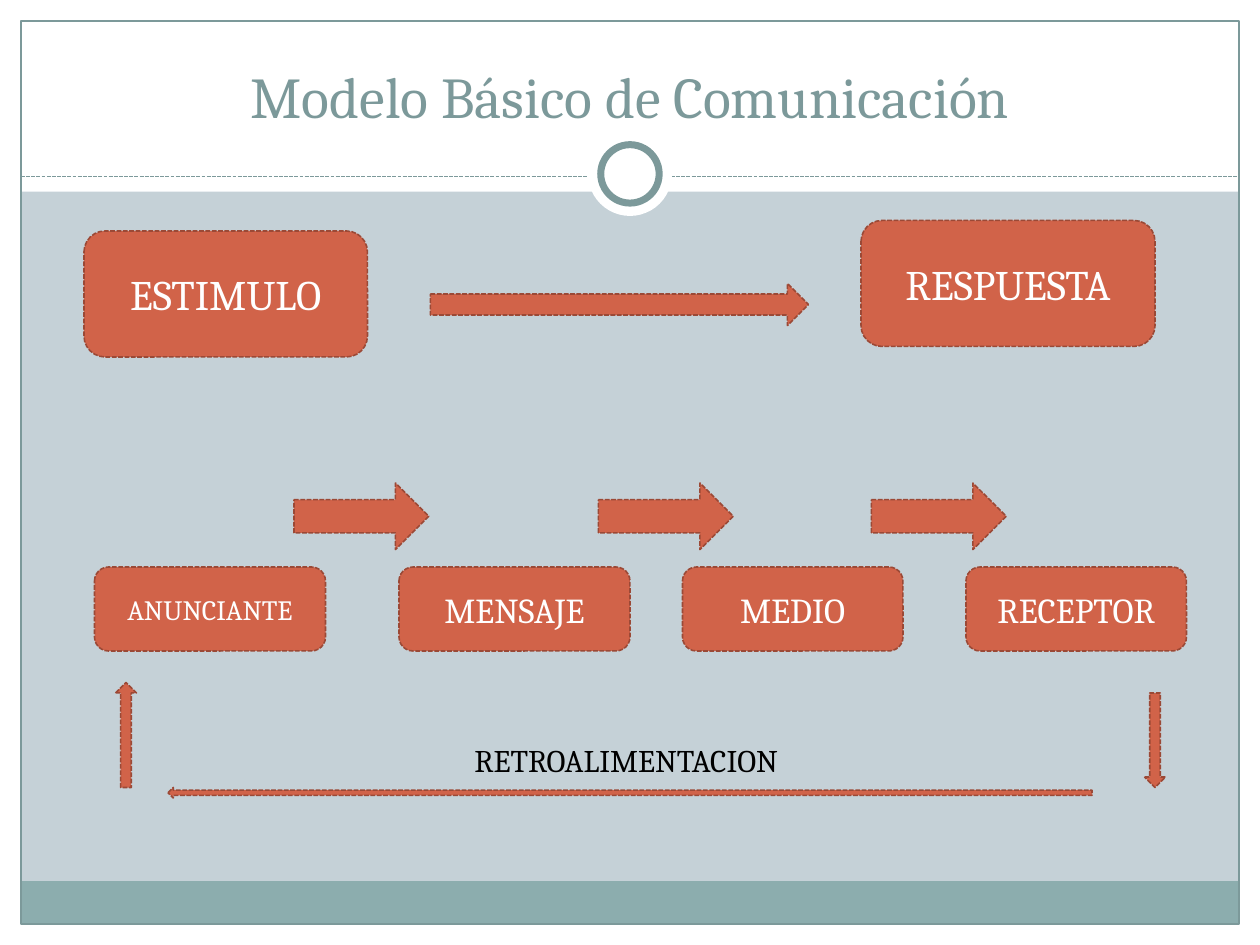
from pptx import Presentation
from pptx.dml.color import RGBColor
from pptx.enum.dml import MSO_LINE
from pptx.enum.shapes import MSO_CONNECTOR, MSO_SHAPE
from pptx.enum.text import MSO_ANCHOR, PP_ALIGN
from pptx.oxml.ns import qn
from pptx.util import Pt
from lxml import etree

RECT, OVAL = MSO_SHAPE.RECTANGLE, MSO_SHAPE.OVAL
ROUNDED, PROCESS = MSO_SHAPE.ROUNDED_RECTANGLE, MSO_SHAPE.FLOWCHART_ALTERNATE_PROCESS
RIGHT, LEFT = MSO_SHAPE.RIGHT_ARROW, MSO_SHAPE.LEFT_ARROW
UP, DOWN = MSO_SHAPE.UP_ARROW, MSO_SHAPE.DOWN_ARROW
DASH, STRAIGHT = MSO_LINE.SQUARE_DOT, MSO_CONNECTOR.STRAIGHT
CENTER, MIDDLE, BOTTOM = PP_ALIGN.CENTER, MSO_ANCHOR.MIDDLE, MSO_ANCHOR.BOTTOM

FONT = "Cambria"
WHITE, BLACK, BACKDROP = "FFFFFF", "000000", "C5D1D7"
TEAL, FOOTER, ORANGE, RUST = "7C999A", "8CADAE", "D16349", "9B4936"
WIDTH, HEIGHT, MARGIN, RULE_Y = 720, 540, 12, 100.8
RING_CENTER = (360, 99.4)

TITLE = "Modelo Básico de Comunicación"
FEEDBACK = "RETROALIMENTACION"
BANDS = [
    ((0, HEIGHT - MARGIN, WIDTH, MARGIN), WHITE),
    ((0, 0, WIDTH, 109.5), WHITE),
    ((0, 0, MARGIN, HEIGHT), WHITE),
    ((WIDTH - MARGIN, 0, MARGIN, HEIGHT), WHITE),
    ((MARGIN, 503.5, WIDTH - 2 * MARGIN, 24.5), FOOTER),
]
RINGS = [(48, None, 0), (33.4, TEAL, 4)]
REACTION = [("RESPUESTA", (492, 126, 168, 72)), ("ESTIMULO", (48, 132, 162, 72))]
STAGES = [("ANUNCIANTE", 54, 132, 16), ("MENSAJE", 228, 132, 20),
          ("MEDIO", 390, 126, 20), ("RECEPTOR", 552, 126, 20)]
STAGE_ARROW_LEFTS = [168, 342, 498]
ARROWS = [
    (RIGHT, (246, 162, 216, 24)),
    (LEFT, (96, 450, 528, 6)),
    (DOWN, (654, 396, 12, 54)),
    (UP, (66, 390, 12, 60)),
] + [(RIGHT, (left, 276, 77, 38)) for left in STAGE_ARROW_LEFTS]


def color(value):
    return RGBColor.from_string(value)


def write(shape, text, size, ink, align=None, anchor=None):
    frame = shape.text_frame
    frame.word_wrap = True
    frame.vertical_anchor = anchor
    paragraph = frame.paragraphs[0]
    paragraph.text = text
    paragraph.alignment = align
    paragraph.font.name = FONT
    paragraph.font.size = Pt(size)
    paragraph.font.color.rgb = color(ink)


def draw(slide, kind, box, fill=None, line=None, weight=0.75, dash=None):
    shape = slide.shapes.add_shape(kind, *map(Pt, box))
    shape.shadow.inherit = False
    if fill:
        shape.fill.solid()
        shape.fill.fore_color.rgb = color(fill)
    else:
        shape.fill.background()
    if line:
        shape.line.color.rgb = color(line)
        shape.line.width = Pt(weight)
        shape.line.dash_style = dash
    else:
        shape.line.fill.background()
    return shape


def draw_part(slide, kind, box):
    return draw(slide, kind, box, ORANGE, RUST, 0.9, DASH)


def draw_frame(slide):
    for box, fill in BANDS:
        draw(slide, RECT, box, fill)
    draw(slide, RECT, (MARGIN, MARGIN, WIDTH - 2 * MARGIN, HEIGHT - 2 * MARGIN), line=TEAL)
    rule = slide.shapes.add_connector(
        STRAIGHT, Pt(MARGIN), Pt(RULE_Y), Pt(WIDTH - MARGIN), Pt(RULE_Y))
    rule.line.color.rgb = color(TEAL)
    rule.line.width = Pt(0.75)
    rule.line.dash_style = DASH
    etree.SubElement(rule.element.spPr, qn("a:effectLst"))
    x, y = RING_CENTER
    for size, line, weight in RINGS:
        draw(slide, OVAL, (x - size / 2, y - size / 2, size, size), WHITE, line, weight)


def place_title(slide):
    title = slide.shapes.title
    title.left, title.top, title.width, title.height = map(Pt, (24, 18, 672, 60))
    write(title, TITLE, 33, TEAL, CENTER, BOTTOM)
    title.element.getparent().append(title.element)


def main():
    """Build the basic communication model slide."""
    deck = Presentation()
    deck.slide_width, deck.slide_height = Pt(WIDTH), Pt(HEIGHT)
    slide = deck.slides.add_slide(deck.slide_layouts[5])
    slide.background.fill.solid()
    slide.background.fill.fore_color.rgb = color(BACKDROP)
    draw_frame(slide)
    place_title(slide)
    for label, box in REACTION:
        write(draw_part(slide, ROUNDED, box), label, 24, WHITE, CENTER, MIDDLE)
    for label, left, width, size in STAGES:
        stage = draw_part(slide, PROCESS, (left, 324, width, 48))
        write(stage, label, size, WHITE, CENTER, MIDDLE)
    for kind, box in ARROWS:
        draw_part(slide, kind, box)
    feedback = slide.shapes.add_textbox(*map(Pt, (264, 420, 240, 29)))
    write(feedback, FEEDBACK, 18, BLACK)
    deck.save("out.pptx")


if __name__ == "__main__":
    main()
